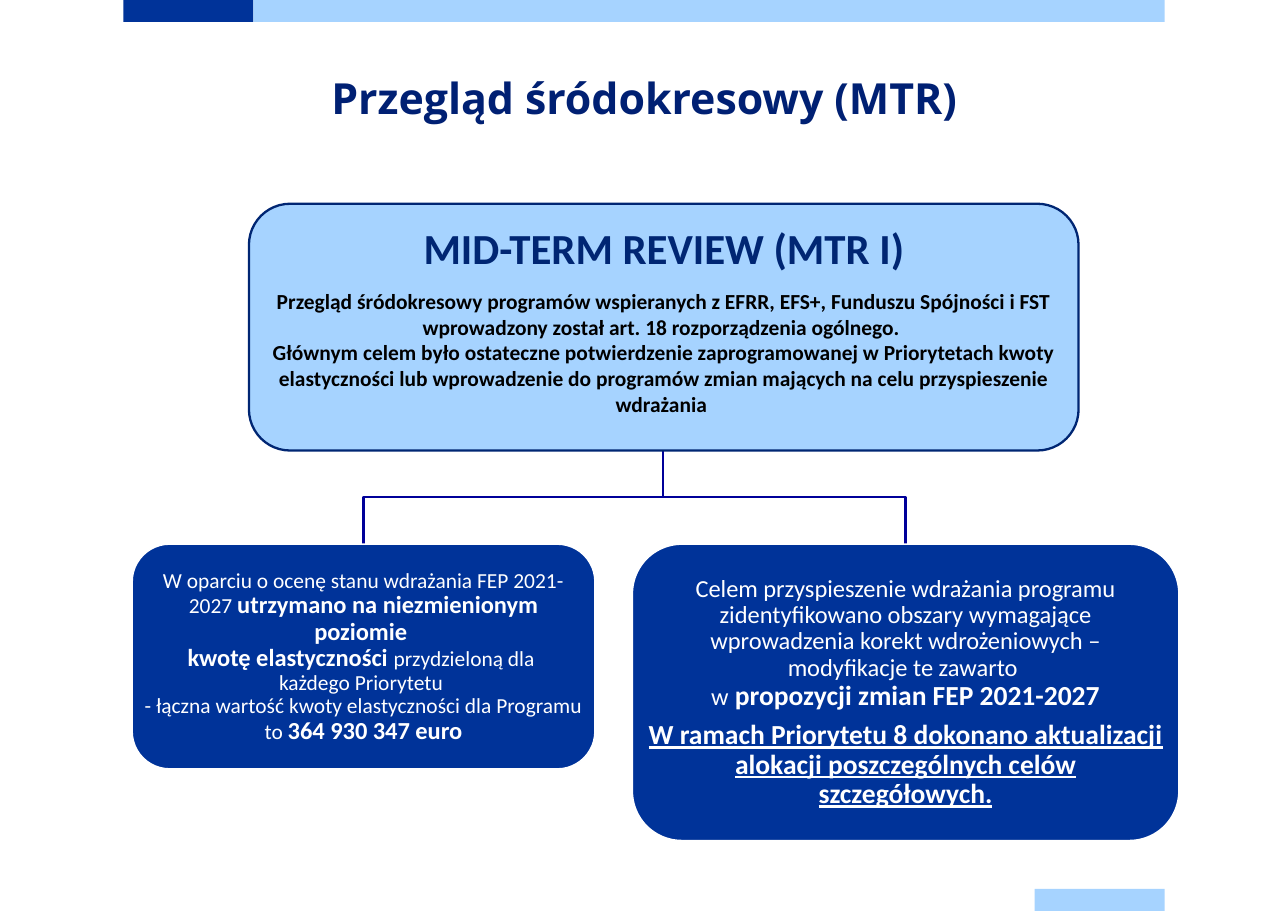
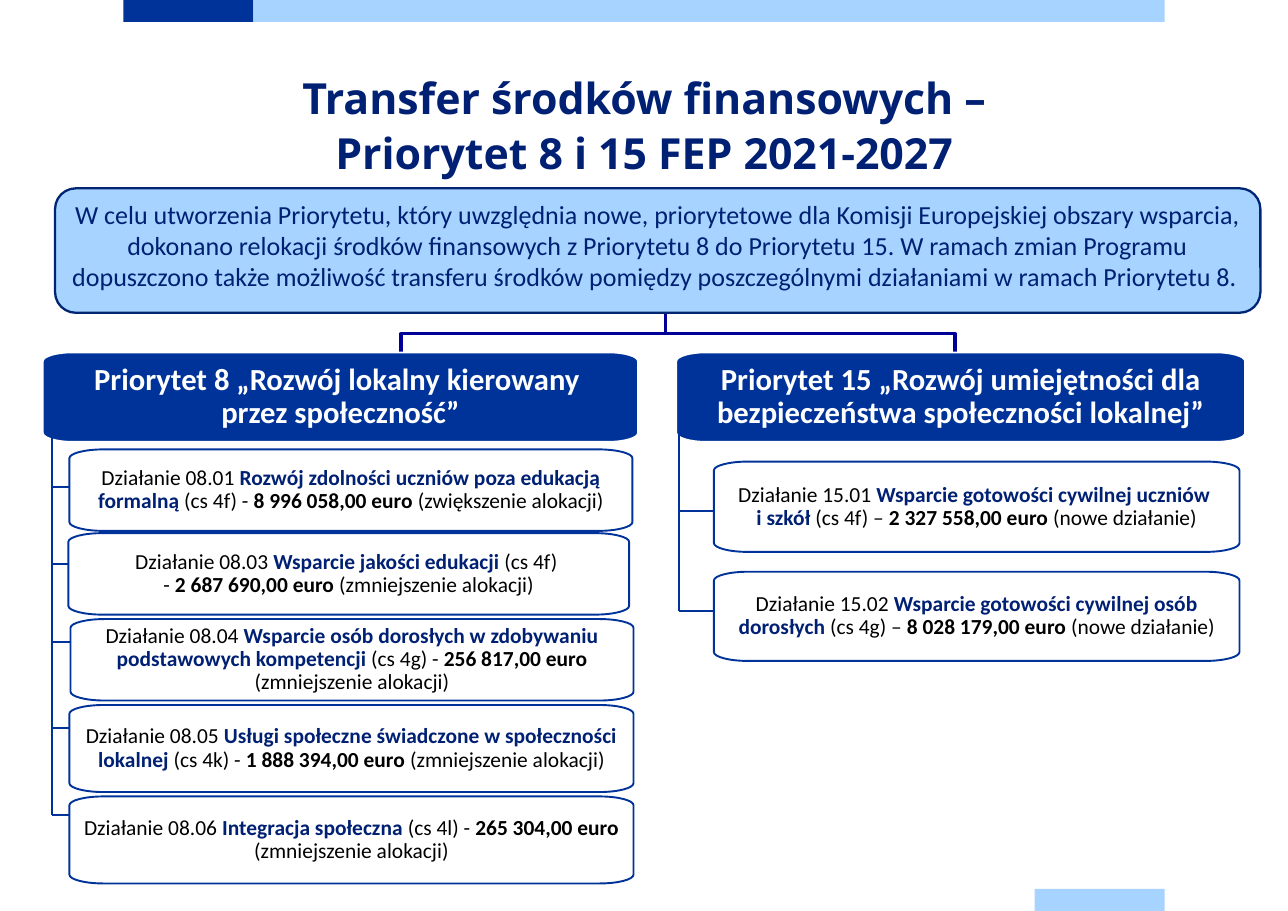
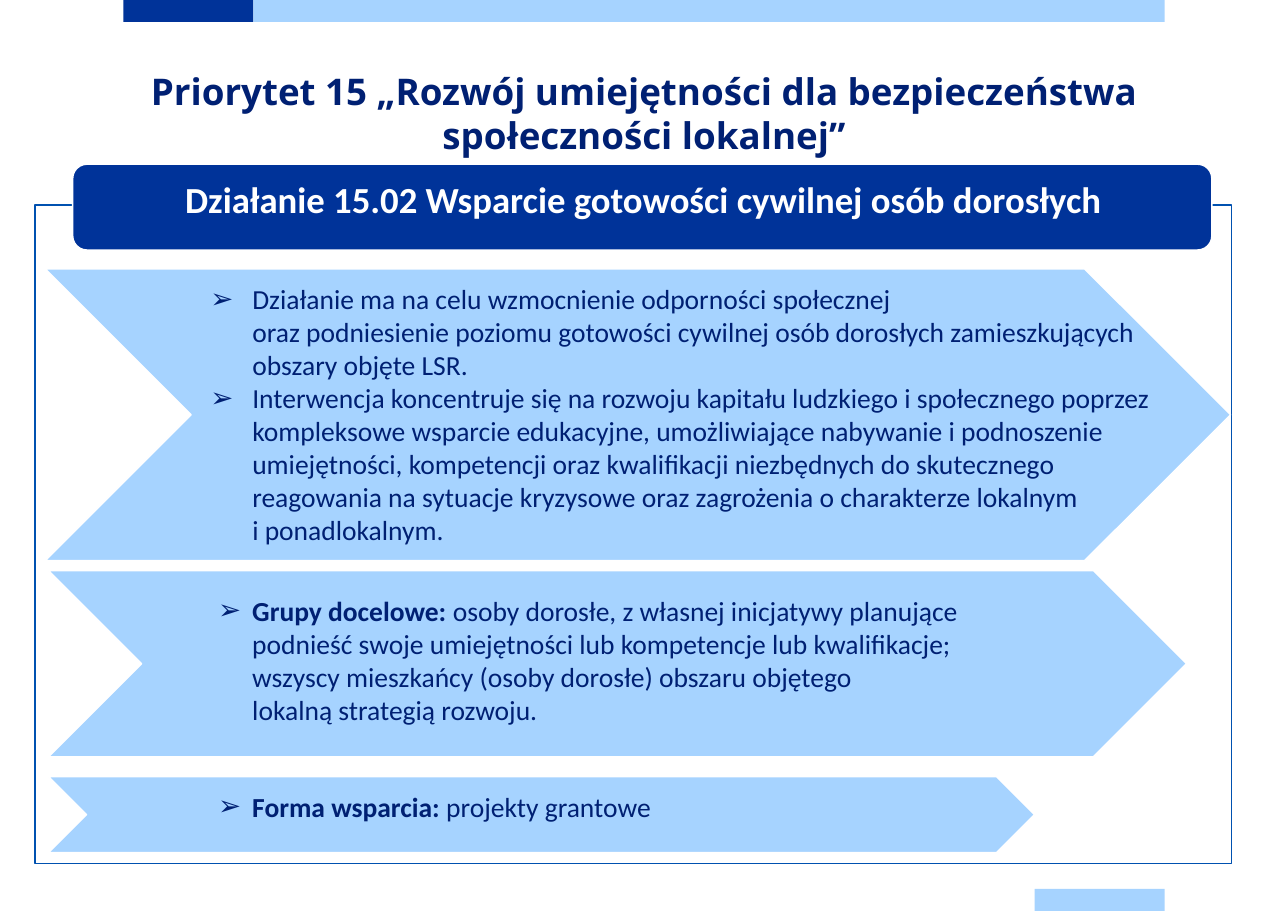
from copy import deepcopy
from dataclasses import dataclass
from typing import NamedTuple, Optional

from lxml.etree import SubElement
from pptx import Presentation
from pptx.dml.color import RGBColor
from pptx.enum.shapes import MSO_CONNECTOR as Connector
from pptx.enum.shapes import MSO_SHAPE as Preset
from pptx.enum.text import MSO_ANCHOR as Anchor
from pptx.enum.text import PP_ALIGN as Align
from pptx.oxml.ns import qn
from pptx.util import Emu, Pt

EMU_PER_PX = 9144
BLUE = "003399"
SKY = "A6D3FF"
NAVY = "002073"
OUTLINE = "002673"
TREE = "000099"
FRAME = "0051B0"
WHITE = "FFFFFF"
BLACK = "000000"


class Rect(NamedTuple):
    left: int
    top: int
    width: int
    height: int


class Insets(NamedTuple):
    left: int = 1
    top: int = 1
    right: int = 1
    bottom: int = 1


class Span(NamedTuple):
    text: str
    size: int
    color: str
    bold: bool = False
    underline: Optional[bool] = None
    font: str = "Calibri"


@dataclass
class Para:
    spans: list
    line: object = 1.0
    after: int = 0
    indent: int = 0


@dataclass
class Action:
    code: str
    name: str
    measure: str
    amount: str
    change: str
    area: Rect
    branch: int


@dataclass
class Priority:
    title: str
    header: Rect
    spine: int
    spine_top: int
    actions: list


@dataclass
class Arrow:
    area: Rect
    text_area: Rect
    paras: list


TITLE_AREA = Rect(112, 62, 945, 108)
BANDS = [
    (Rect(112, 0, 118, 20), BLUE),
    (Rect(230, 0, 827, 20), SKY),
    (Rect(939, 807, 118, 20), SKY),
]

REVIEW_TEXT = [
    Para([Span("MID-TERM REVIEW (MTR I)", 28, OUTLINE, True)], after=10),
    Para([Span("Przegląd śródokresowy programów wspieranych z EFRR, EFS+, Funduszu Spójności i FST "
               "wprowadzony został art. 18 rozporządzenia ogólnego. ", 14, BLACK, True)]),
    Para([Span("Głównym celem było ostateczne potwierdzenie zaprogramowanej w Priorytetach kwoty "
               "elastyczności lub wprowadzenie do programów zmian mających na celu przyspieszenie "
               "wdrażania ", 14, BLACK, True)]),
]
FLEXIBILITY_TEXT = [
    Para([
        Span("W oparciu o ocenę stanu wdrażania FEP 2021-2027 ", 14, WHITE),
        Span("utrzymano na niezmienionym poziomie \nkwotę elastyczności ", 16, WHITE, True),
        Span("przydzieloną dla \nkażdego Priorytetu \n- łączna wartość kwoty elastyczności "
             "dla Programu to ", 14, WHITE),
        Span("364 930 347 euro", 16, WHITE, True),
    ], line=0.9),
]
CHANGES_TEXT = [
    Para([
        Span("Celem przyspieszenie wdrażania programu zidentyfikowano obszary wymagające "
             "wprowadzenia korekt wdrożeniowych – modyfikacje te zawarto \nw", 16, WHITE),
        Span(" propozycji zmian FEP 2021-2027", 18, WHITE, True),
    ], line=0.9, after=6),
    Para([Span("W ramach Priorytetu 8 dokonano aktualizacji alokacji poszczególnych celów "
               "szczegółowych.", 18, WHITE, True, True)], line=0.9),
]
TRANSFER_TEXT = [
    Para([Span("W celu utworzenia Priorytetu, który uwzględnia nowe, priorytetowe dla Komisji "
               "Europejskiej obszary wsparcia, dokonano relokacji środków finansowych z Priorytetu 8 "
               "do Priorytetu 15. W ramach zmian Programu dopuszczono także możliwość transferu "
               "środków pomiędzy poszczególnymi działaniami w ramach Priorytetu 8. ", 17, NAVY)]),
]

LESS = "(zmniejszenie alokacji)"
NEW = "(nowe działanie)"
PRIORITIES = [
    Priority("Priorytet 8 „Rozwój lokalny kierowany \nprzez społeczność”",
             Rect(39, 320, 540, 81), 47, 398, [
        Action("08.01", "Rozwój zdolności uczniów poza edukacją formalną", "(cs 4f) - ",
               "8 996 058,00", "(zwiększenie alokacji)", Rect(63, 408, 511, 74), 442),
        Action("08.03", "Wsparcie jakości edukacji", "(cs 4f) \n- ",
               "2 687 690,00", LESS, Rect(62, 484, 509, 74), 512),
        Action("08.04", "Wsparcie osób dorosłych w zdobywaniu podstawowych kompetencji",
               "(cs 4g) - ", "256 817,00", LESS, Rect(64, 562, 511, 74), 583),
        Action("08.05", "Usługi społeczne świadczone w społeczności lokalnej", "(cs 4k) - ",
               "1 888 394,00", LESS, Rect(63, 640, 512, 79), 661),
        Action("08.06", "Integracja społeczna", "(cs 4l) - ",
               "265 304,00", LESS, Rect(63, 723, 512, 79), 740),
    ]),
    Priority("Priorytet 15 „Rozwój umiejętności dla bezpieczeństwa społeczności lokalnej”",
             Rect(614, 320, 516, 81), 616, 373, [
        Action("15.01", "Wsparcie gotowości cywilnej uczniów \ni szkół", "(cs 4f) – ",
               "2 327 558,00", NEW, Rect(648, 419, 477, 82), 464),
        Action("15.02", "Wsparcie gotowości cywilnej osób dorosłych", "(cs 4g) – ",
               "8 028 179,00", NEW, Rect(648, 519, 477, 81), 555),
    ]),
]

ARROWS = [
    Arrow(Rect(41, 244, 1076, 265), Rect(175, 261, 899, 230), [
        Para([Span("Działanie ma na celu wzmocnienie odporności społecznej \noraz podniesienie "
                   "poziomu gotowości cywilnej osób dorosłych zamieszkujących obszary objęte LSR.",
                   18, NAVY)], indent=38),
        Para([Span("Interwencja koncentruje się na rozwoju kapitału ludzkiego i społecznego poprzez "
                   "kompleksowe wsparcie edukacyjne, umożliwiające nabywanie i podnoszenie "
                   "umiejętności, kompetencji oraz kwalifikacji niezbędnych do skutecznego reagowania "
                   "na sytuacje kryzysowe oraz zagrożenia o charakterze lokalnym \ni ponadlokalnym.",
                   18, NAVY)], indent=38),
    ]),
    Arrow(Rect(44, 518, 1033, 169), Rect(182, 519, 874, 160), [
        Para([Span("Grupy docelowe: ", 18, NAVY, True),
              Span("osoby dorosłe, z własnej inicjatywy planujące \npodnieść swoje umiejętności lub "
                   "kompetencje lub kwalifikacje; \nwszyscy mieszkańcy (osoby dorosłe) obszaru "
                   "objętego \nlokalną strategią rozwoju.", 18, NAVY)], indent=31),
    ]),
    Arrow(Rect(44, 705, 895, 69), Rect(182, 696, 757, 72), [
        Para([Span("Forma wsparcia:", 18, NAVY, True),
              Span(" projekty grantowe", 18, NAVY)], indent=31),
    ]),
]


def px(value: float) -> Emu:
    return Emu(round(value * EMU_PER_PX))


def rgb(color: str) -> RGBColor:
    return RGBColor.from_string(color)


def apply(target, values: dict) -> None:
    for name, value in values.items():
        setattr(target, name, value)


def add_span(paragraph, span: Span) -> None:
    for index, part in enumerate(span.text.split("\n")):
        if index:
            paragraph.add_line_break()
            paragraph._p[-1].append(deepcopy(run._r.get_or_add_rPr()))
        run = paragraph.add_run()
        run.text = part
        apply(run.font, {"size": Pt(span.size), "bold": span.bold,
                         "underline": span.underline, "name": span.font})
        run.font.color.rgb = rgb(span.color)


def add_bullet(paragraph, indent: int) -> None:
    props = paragraph._p.get_or_add_pPr()
    props.set("marL", str(px(indent)))
    props.set("indent", str(-px(indent)))
    SubElement(props, qn("a:buFont")).set("typeface", "Arial")
    SubElement(props, qn("a:buChar")).set("char", "➢")


def write(shape, paras: list, insets: Insets = Insets(), anchor=Anchor.MIDDLE) -> None:
    frame = shape.text_frame
    apply(frame, {"word_wrap": True, "vertical_anchor": anchor,
                  "margin_left": px(insets.left), "margin_top": px(insets.top),
                  "margin_right": px(insets.right), "margin_bottom": px(insets.bottom)})
    for index, para in enumerate(paras):
        paragraph = frame.add_paragraph() if index else frame.paragraphs[0]
        if para.indent:
            add_bullet(paragraph, para.indent)
        apply(paragraph, {"alignment": Align.LEFT if para.indent else Align.CENTER,
                          "line_spacing": para.line, "space_after": Pt(para.after)})
        for span in para.spans:
            add_span(paragraph, span)


def paint(shape, fill: Optional[str], line: Optional[str], weight: float):
    shape.shadow.inherit = False
    if fill:
        shape.fill.solid()
        shape.fill.fore_color.rgb = rgb(fill)
    else:
        shape.fill.background()
    if line:
        shape.line.color.rgb = rgb(line)
        shape.line.width = Pt(weight)
    else:
        shape.line.fill.background()
    return shape


def add_box(page, preset, area: Rect, fill: str, line: Optional[str] = None, weight: float = 1):
    return paint(page.shapes.add_shape(preset, *map(px, area)), fill, line, weight)


def add_outline(page, points: list, close: bool):
    start, *rest = [(px(x), px(y)) for x, y in points]
    builder = page.shapes.build_freeform(*start)
    builder.add_line_segments(rest, close=close)
    return builder.convert_to_shape()


def add_card(page, area: Rect, radius_x: int, fill: str, line: str, weight: float):
    radius_y, pull = 8, 0.45
    left, top = area.left, area.top
    right, bottom = left + area.width, top + area.height
    corners = [(left, top, 1, 1), (right, top, -1, 1),
               (right, bottom, -1, -1), (left, bottom, 1, -1)]
    points = []
    for index, (x, y, to_x, to_y) in enumerate(corners):
        reach_x, reach_y = to_x * radius_x, to_y * radius_y
        curve = [(x, y + reach_y), (x, y + reach_y * pull),
                 (x + reach_x * pull, y), (x + reach_x, y)]
        points += curve[::-1] if index % 2 else curve
    card = add_outline(page, points, True)
    steps = list(card._element.iter(qn("a:lnTo")))
    for first in range(0, len(steps) - 2, 4):
        start, *others = steps[first:first + 3]
        curve = start.getparent().makeelement(qn("a:cubicBezTo"))
        start.addprevious(curve)
        for step in (start, *others):
            curve.append(step[0])
            step.getparent().remove(step)
    return paint(card, fill, line, weight)


def add_line(page, start: tuple, end: tuple) -> None:
    line = page.shapes.add_connector(Connector.STRAIGHT, *map(px, start + end))
    line.line.color.rgb = rgb(BLUE)
    line.line.width = Pt(1.25)
    SubElement(line._element.spPr, qn("a:effectLst"))


def add_tree(page, root: tuple, bus: int, leaves: list, bottom: int, weight: float) -> None:
    for leaf in leaves:
        branch = [root, (root[0], bus), (leaf, bus), (leaf, bottom)]
        paint(add_outline(page, branch, False), None, TREE, weight)


def add_page(deck, title: str, size: int, spacing: int):
    page = deck.slides.add_slide(deck.slide_layouts[6])
    for area, color in BANDS:
        add_box(page, Preset.RECTANGLE, area, color)
    span = Span(title, size, NAVY, True, font="Open Sans")
    write(page.shapes.add_textbox(*map(px, TITLE_AREA)), [Para([span], line=Pt(spacing))],
          Insets(0, 0, 0, 0), Anchor.TOP)
    return page


def build_review(deck) -> None:
    page = add_page(deck, "Przegląd śródokresowy (MTR)", 28, 36)
    add_tree(page, (602, 409), 451, [822, 330], 494, 1.5)
    review = add_box(page, Preset.ROUNDED_RECTANGLE, Rect(226, 185, 753, 224), SKY, OUTLINE, 1.5)
    write(review, REVIEW_TEXT, Insets(2, 2, 2, 17))
    outcomes = [(Rect(120, 494, 420, 204), FLEXIBILITY_TEXT),
                (Rect(574, 494, 496, 269), CHANGES_TEXT)]
    for area, paras in outcomes:
        write(add_box(page, Preset.ROUNDED_RECTANGLE, area, BLUE, WHITE), paras, Insets(1, 2, 1, 1))


def build_priority(page, priority: Priority) -> None:
    header = add_card(page, priority.header, 27, BLUE, WHITE, 1)
    write(header, [Para([Span(priority.title, 20, WHITE, True)], line=0.9)], Insets(11, 9, 11, 9))
    spine = priority.spine
    add_line(page, (spine, priority.spine_top), (spine, priority.actions[-1].branch))
    for action in priority.actions:
        card = add_card(page, action.area, 31, WHITE, BLUE, 1.25)
        write(card, [Para([
            Span(f"Działanie {action.code} ", 14, BLACK),
            Span(f"{action.name} ", 14, NAVY, True),
            Span(action.measure, 14, BLACK),
            Span(f"{action.amount} euro ", 14, BLACK, True),
            Span(action.change, 14, BLACK),
        ], line=0.9)], Insets(7, 6, 7, 6))
        add_line(page, (spine, action.branch), (action.area.left, action.branch))


def build_transfer(deck) -> None:
    page = add_page(deck, "Transfer środków finansowych –\nPriorytet 8 i 15 FEP 2021-2027", 28, 36)
    add_tree(page, (604, 250), 303, [364, 867], 338, 2.25)
    summary = add_box(page, Preset.ROUNDED_RECTANGLE, Rect(50, 171, 1094, 113), SKY, OUTLINE, 1.5)
    write(summary, TRANSFER_TEXT, Insets(3, 1, 3, 11))
    for priority in PRIORITIES:
        build_priority(page, priority)


def build_action(deck) -> None:
    page = add_page(deck, "Priorytet 15 „Rozwój umiejętności dla bezpieczeństwa społeczności lokalnej”",
                    24, 29)
    add_box(page, Preset.RECTANGLE, Rect(32, 186, 1086, 598), WHITE, FRAME)
    header = add_box(page, Preset.ROUNDED_RECTANGLE, Rect(66, 149, 1034, 78), BLUE, WHITE)
    heading = Span("Działanie 15.02 Wsparcie gotowości cywilnej osób dorosłych", 24, WHITE, True)
    write(header, [Para([heading])], Insets(27, 0, 25, 15))
    for arrow in ARROWS:
        add_box(page, Preset.CHEVRON, arrow.area, SKY, WHITE)
        write(page.shapes.add_textbox(*map(px, arrow.text_area)), arrow.paras, Insets(16, 5, 5, 5))


def main() -> None:
    deck = Presentation()
    deck.slide_width, deck.slide_height = px(1169), px(827)
    for build in (build_review, build_transfer, build_action):
        build(deck)
    deck.save("out.pptx")


if __name__ == "__main__":
    main()
